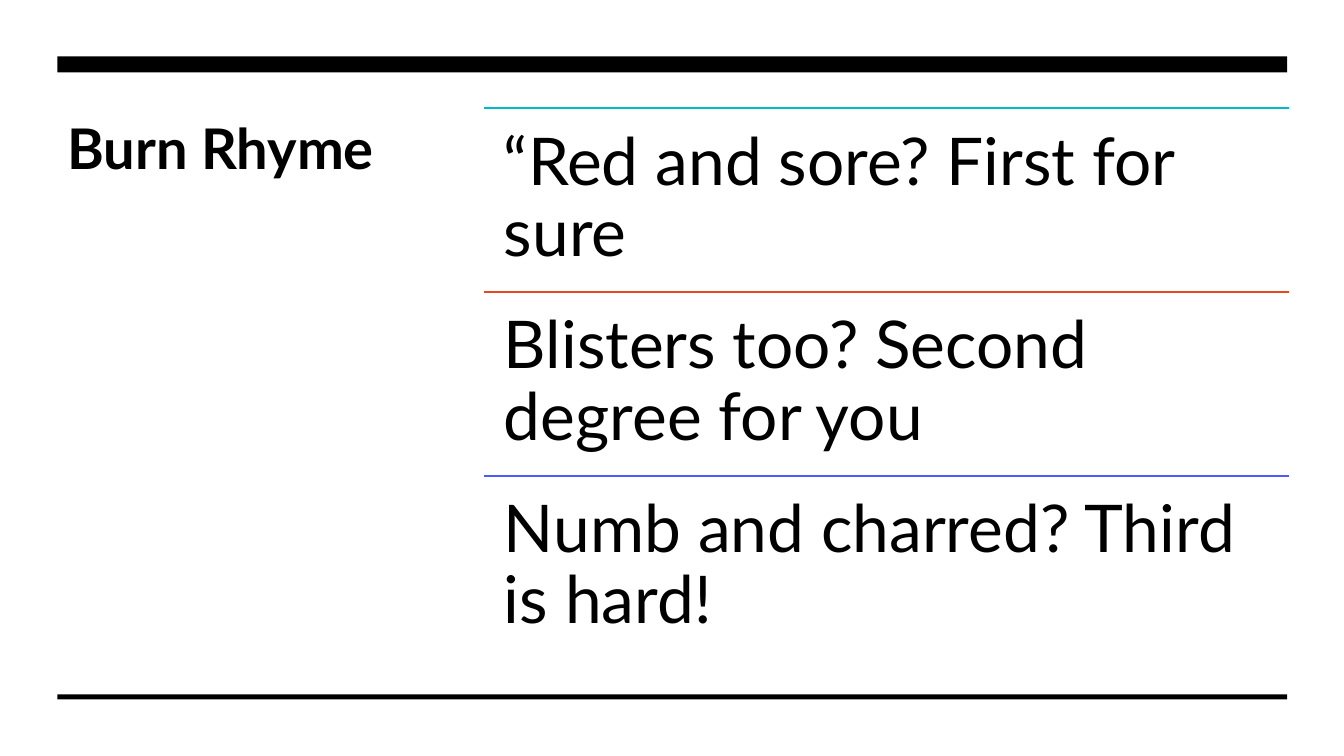
import dataclasses

import lxml.etree
import pptx
import pptx.dml.color
import pptx.enum.shapes
import pptx.enum.text
import pptx.oxml.ns
import pptx.util

Pt = pptx.util.Pt
HUES = {
    "black": "000000",
    "white": "FFFFFF",
    "teal": "00BAC8",
    "red": "E64823",
    "blue": "4D5AFF",
}
FONT = "Lato"
LEFT, WIDE = 345.6, 575.3
TOP, STEP = 77.2, 131.3


@dataclasses.dataclass
class Bar:
    top: float
    high: float


@dataclasses.dataclass
class Verse:
    text: str
    hue: str


BARS = [Bar(40.2, 11.6), Bar(496, 3.6)]
VERSES = [
    Verse("“Red and sore? First for sure", "teal"),
    Verse("Blisters too? Second degree for you", "red"),
    Verse("Numb and charred? Third is hard!", "blue"),
]


def tint(name: str) -> pptx.dml.color.RGBColor:
    return pptx.dml.color.RGBColor.from_string(HUES[name])


def place(shape, left: float, top: float, wide: float, high: float) -> None:
    shape.left, shape.top = Pt(left), Pt(top)
    shape.width, shape.height = Pt(wide), Pt(high)


def write(shape, text: str, *, size: float, bold: bool = False,
          pad: tuple[float, float] = (7.2, 3.6), lead: float = 1.0,
          gap: float = 0) -> None:
    frame = shape.text_frame
    frame.text = text
    frame.word_wrap = True
    frame.auto_size = pptx.enum.text.MSO_AUTO_SIZE.NONE
    frame.vertical_anchor = pptx.enum.text.MSO_ANCHOR.TOP
    frame.margin_left = frame.margin_right = Pt(pad[0])
    frame.margin_top = frame.margin_bottom = Pt(pad[1])
    for para in frame.paragraphs:
        para.alignment = pptx.enum.text.PP_ALIGN.LEFT
        para.line_spacing = lead
        para.space_before, para.space_after = Pt(0), Pt(gap)
        props = para._p.get_or_add_pPr()
        props.set("marL", "0")
        props.set("indent", "0")
        lxml.etree.SubElement(props, pptx.oxml.ns.qn("a:buNone"))
        for run in para.runs:
            run.font.name = FONT
            run.font.size = Pt(size)
            run.font.bold = bold
            run.font.color.rgb = tint("black")


def draw_bar(slide, bar: Bar) -> None:
    shape = slide.shapes.add_shape(
        pptx.enum.shapes.MSO_SHAPE.RECTANGLE,
        Pt(41), Pt(bar.top), Pt(878.4), Pt(bar.high))
    shape.shadow.inherit = False
    shape.fill.solid()
    shape.fill.fore_color.rgb = tint("black")
    shape.line.fill.background()


def draw_rule(slide, top: float, hue: str) -> None:
    rule = slide.shapes.add_connector(
        pptx.enum.shapes.MSO_CONNECTOR.STRAIGHT,
        Pt(LEFT), Pt(top), Pt(LEFT + WIDE), Pt(top))
    rule.line.color.rgb = tint(hue)
    rule.line.width = Pt(1.5)
    lxml.etree.SubElement(
        rule._element.spPr, pptx.oxml.ns.qn("a:effectLst"))


def main() -> None:
    deck = pptx.Presentation()
    deck.slide_width, deck.slide_height = Pt(960), Pt(540)
    slide = deck.slides.add_slide(deck.slide_layouts[1])
    slide.background.fill.solid()
    slide.background.fill.fore_color.rgb = tint("white")

    title = slide.shapes.title
    place(title, 41, TOP, 248.4, 320.4)
    write(title, "Burn Rhyme", size=40, bold=True)

    body = slide.placeholders[1]
    place(body, LEFT, TOP, WIDE, STEP * len(VERSES))
    write(body, "\n".join(verse.text for verse in VERSES), size=47,
          pad=(14.4, 14.4), lead=0.9, gap=29.8)

    for bar in BARS:
        draw_bar(slide, bar)
    for row, verse in enumerate(VERSES):
        draw_rule(slide, TOP + row * STEP, verse.hue)
    deck.save("out.pptx")


if __name__ == "__main__":
    main()
